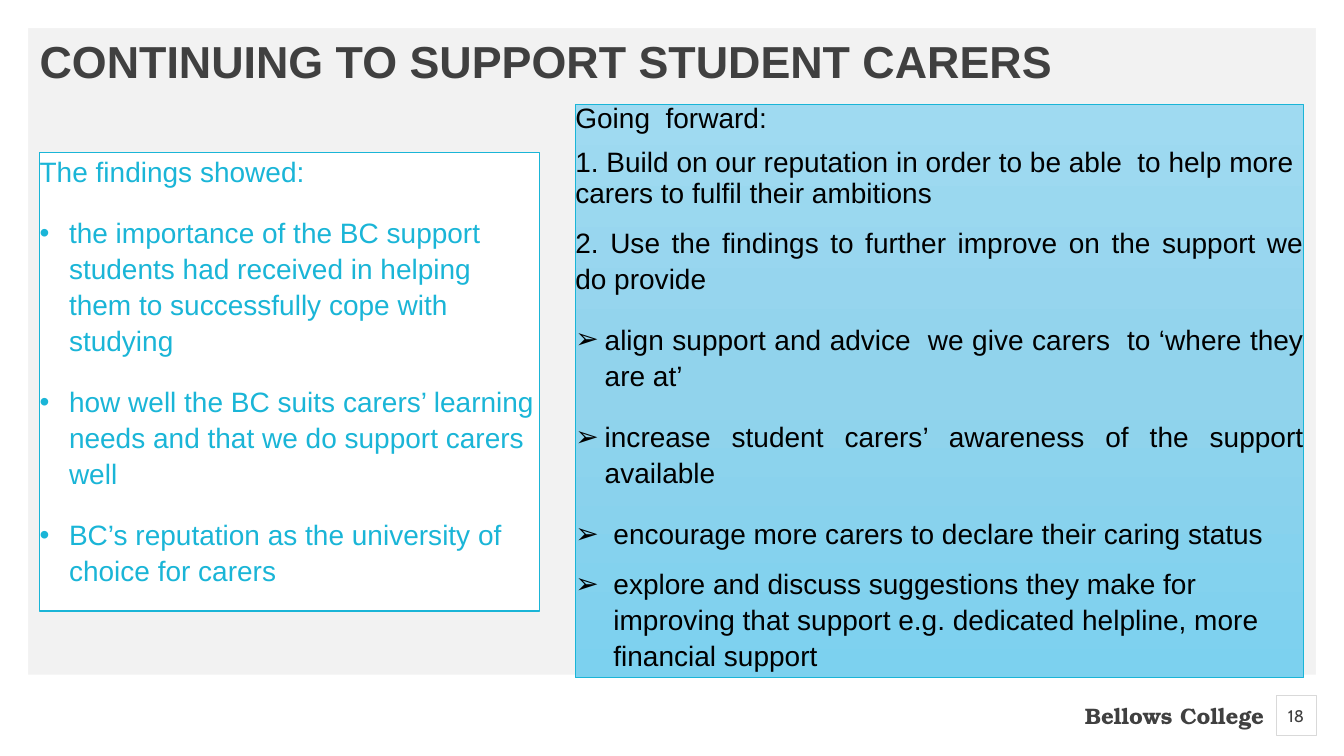
"""Build the slide on continuing to support student carers."""
from copy import deepcopy

from lxml import etree
from pptx import Presentation
from pptx import util as u
from pptx.dml.color import RGBColor
from pptx.enum import shapes, text
from pptx.oxml.ns import qn

WIDTH, HEIGHT = 33.87, 19.05
MARGIN, FOOTER_TOP = 0.71, 17
GREY, BLUE, BLACK, WHITE = "404040", "1AB5D7", "000000", "FFFFFF"
LEFT, RIGHT, CENTER, JUSTIFY = (
    text.PP_ALIGN.LEFT, text.PP_ALIGN.RIGHT, text.PP_ALIGN.CENTER, text.PP_ALIGN.JUSTIFY)

TITLE = "CONTINUING TO SUPPORT STUDENT CARERS"
COLLEGE = "Bellows College"
PAGE_NUMBER = "18"

# (wording, bullet, indent in cm, alignment, line spacing, space after)
FINDINGS = [
    ("The findings showed:", "", 0, LEFT, 1.07, 8),
    ("the importance of the BC support students had received in helping them "
     "to successfully cope with studying", "•", 0.74, LEFT, 1.07, 8),
    ("how well the BC suits carers’ learning needs and that we do support carers well",
     "•", 0.74, LEFT, 1.07, 8),
    ("BC’s reputation as the university of choice for carers", "•", 0.74, LEFT, 1.07, 8),
]
PLANS = [
    ("Going  forward:", "", 0, LEFT, 0.9, 0),
    ("1. Build on our reputation in order to be able  to help more carers to fulfil "
     "their ambitions", "", 0, LEFT, 0.9, 0),
    ("2. Use the findings to further improve on the support we do provide",
     "", 0, JUSTIFY, 1.07, 8),
    ("align support and advice  we give carers  to ‘where they are at’",
     "➢", 0.74, JUSTIFY, 1.07, 8),
    ("increase student carers’ awareness of the support available",
     "➢", 0.74, JUSTIFY, 1.07, 8),
    ("encourage more carers to declare their caring status", "➢", 0.96, LEFT, 1.07, 0),
    ("explore and discuss suggestions they make for improving that support e.g. "
     "dedicated helpline, more financial support", "➢", 0.96, LEFT, 1.07, 8),
]
GRADIENT = [(0, "9FDAF1"), (0.5, "91D3EC"), (1, "7CD1EF")]
FRAME = [
    (0, 0, WIDTH, MARGIN),
    (0, FOOTER_TOP, WIDTH, HEIGHT - FOOTER_TOP),
    (0, 0, MARGIN, HEIGHT),
    (WIDTH - MARGIN, 0, MARGIN, HEIGHT),
]


def color(value):
    return RGBColor.from_string(value)


def add_box(page, place, fill=None, line=None, weight=1):
    box = page.shapes.add_shape(shapes.MSO_SHAPE.RECTANGLE, *map(u.Cm, place))
    box.shadow.inherit = False
    if fill:
        box.fill.solid()
        box.fill.fore_color.rgb = color(fill)
    else:
        box.fill.background()
    if line:
        box.line.color.rgb = color(line)
        box.line.width = u.Pt(weight)
    else:
        box.line.fill.background()
    return box


def shade(box):
    box.fill.gradient()
    box.fill.gradient_angle = 270
    stops = box._element.spPr.find(qn("a:gradFill")).find(qn("a:gsLst"))
    stops.append(deepcopy(stops[-1]))
    for stop, (position, value) in zip(box.fill.gradient_stops, GRADIENT):
        stop.position = position
        stop.color.rgb = color(value)


def prepare(box, anchor):
    frame = box.text_frame
    frame.word_wrap = True
    frame.vertical_anchor = anchor
    frame.margin_left = frame.margin_right = frame.margin_top = frame.margin_bottom = 0
    return frame


def style(para, size, font, value, bold=False):
    for span in para.runs:
        span.font.size = u.Pt(size)
        span.font.name = font
        span.font.bold = bold
        span.font.color.rgb = color(value)


def write_line(box, words, align, anchor, *look):
    frame = prepare(box, anchor)
    frame.text = words
    para = frame.paragraphs[0]
    para.alignment = align
    style(para, *look)
    return para


def write_list(box, items, value):
    frame = prepare(box, text.MSO_ANCHOR.TOP)
    frame.text = "\n".join(item[0] for item in items)
    for para, (_, bullet, indent, align, spacing, after) in zip(frame.paragraphs, items):
        para.alignment = align
        para.line_spacing = spacing
        para.space_before = u.Pt(10)
        para.space_after = u.Pt(after)
        style(para, 20, "Arial", value)
        if bullet:
            props = para._p.get_or_add_pPr()
            props.set("marL", str(u.Cm(indent)))
            props.set("indent", str(-u.Cm(indent)))
            etree.SubElement(props, qn("a:buFont")).set("typeface", "Arial")
            etree.SubElement(props, qn("a:buChar")).set("char", bullet)


def main():
    deck = Presentation()
    deck.slide_width, deck.slide_height = u.Cm(WIDTH), u.Cm(HEIGHT)
    page = deck.slides.add_slide(deck.slide_layouts[6])
    page.background.fill.solid()
    page.background.fill.fore_color.rgb = color("F2F2F2")
    for place in FRAME:
        add_box(page, place, WHITE)

    top, middle = text.MSO_ANCHOR.TOP, text.MSO_ANCHOR.MIDDLE
    college = page.shapes.add_textbox(*map(u.Cm, (25.43, 17.53, 6.43, 1)))
    write_line(college, COLLEGE, RIGHT, middle, 16, "TeX Gyre Bonum", GREY, True)
    title = page.shapes.add_textbox(*map(u.Cm, (1, 1, 31.87, 3.05)))
    write_line(title, TITLE, LEFT, top, 32, "Arial", GREY, True).line_spacing = 0.9

    write_list(add_box(page, (1, 3.84, 12.6, 11.56), WHITE, BLUE), FINDINGS, BLUE)
    plans = add_box(page, (14.5, 2.63, 18.36, 14.45), WHITE, BLUE, 0.5)
    shade(plans)
    write_list(plans, PLANS, BLACK)

    number = add_box(page, (32.16, 17.53, 1, 1), None, "D9D9D9", 0.25)
    write_line(number, PAGE_NUMBER, CENTER, middle, 12, "Cabin", GREY)
    deck.save("out.pptx")


if __name__ == "__main__":
    main()
